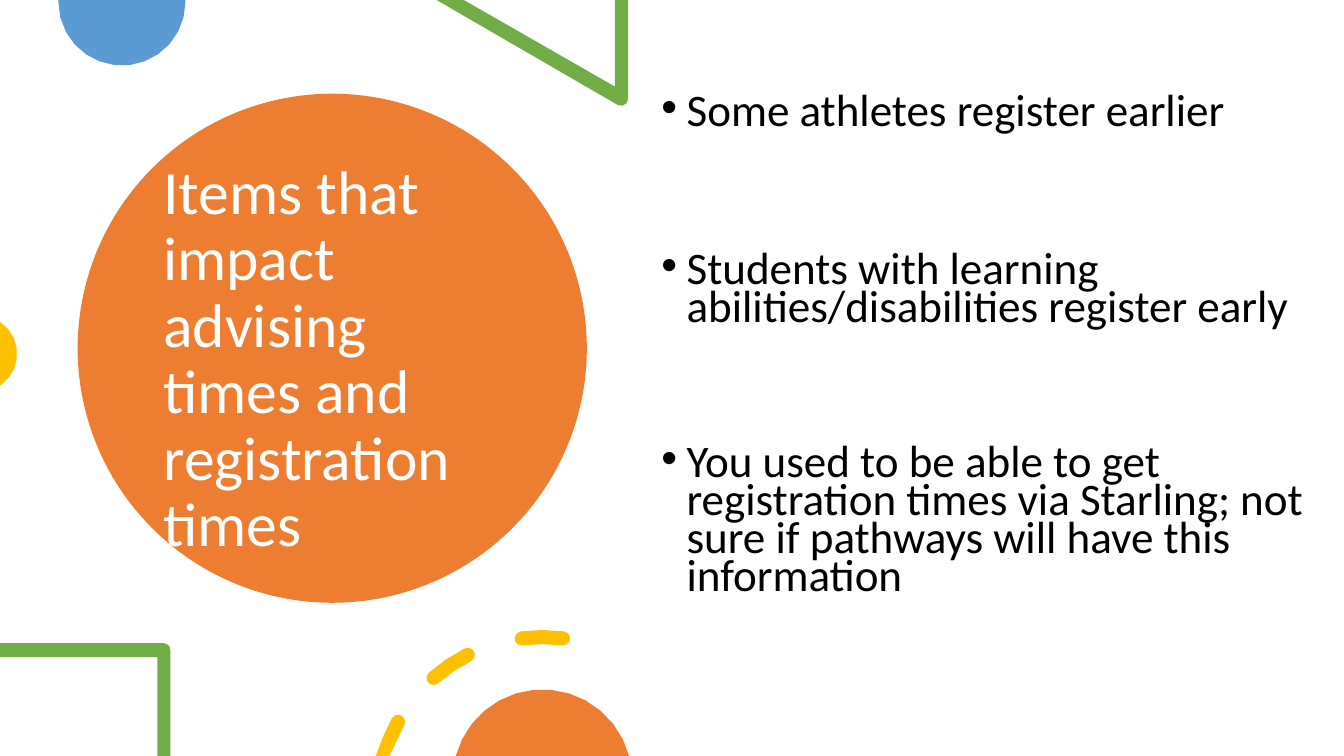
from math import ceil, cos, radians, sin, sqrt

from lxml import etree
from pptx import Presentation
from pptx.dml.color import RGBColor
from pptx.enum.shapes import MSO_SHAPE
from pptx.enum.text import MSO_ANCHOR, MSO_AUTO_SIZE, PP_ALIGN
from pptx.oxml.ns import qn
from pptx.util import Inches, Pt

OVAL = MSO_SHAPE.OVAL
MIDDLE = MSO_ANCHOR.MIDDLE
TOP = MSO_ANCHOR.TOP
LEFT = PP_ALIGN.LEFT
FIXED = MSO_AUTO_SIZE.NONE

ORANGE = RGBColor(0xED, 0x7D, 0x31)
BLUE = RGBColor(0x5B, 0x9B, 0xD5)
GREEN = RGBColor(0x70, 0xAD, 0x47)
YELLOW = RGBColor(0xFF, 0xC0, 0x00)
WHITE = RGBColor(0xFF, 0xFF, 0xFF)
BLACK = RGBColor(0, 0, 0)

FONT = "Calibri"
WIDE, HIGH = 13.33, 7.5
TITLE = "Items that impact advising times and registration times"
ITEMS = [
    ("Some athletes register earlier", 10),
    ("Students with learning abilities/disabilities register early", 86),
    ("You used to be able to get registration times via Starling; "
     "not sure if pathways will have this information", 84),
]


def arc(x, y, size, start, end):
    steps = ceil(abs(end - start) * sqrt(size) / 11)
    turns = [radians(start + (end - start) * i / steps) for i in range(steps + 1)]
    return [(x + size * cos(t), y + size * sin(t)) for t in turns]


def dash(x, y, size, half, start, end):
    def cap(angle, turn):
        t = radians(angle)
        return arc(x + size * cos(t), y + size * sin(t), half, turn, turn + 180)[1:-1]

    loop = (arc(x, y, size + half, start, end) + cap(end, end)
            + arc(x, y, size - half, end, start) + cap(start, start + 180))
    return [(px, min(py, HIGH)) for px, py in loop]


def paint(shape, color):
    shape.shadow.inherit = False
    shape.fill.solid()
    shape.fill.fore_color.rgb = color
    shape.line.fill.background()


def outline(slide, color, *loops):
    paths = [[(Inches(x), Inches(y)) for x, y in loop] for loop in loops]
    pen = slide.shapes.build_freeform(*paths[0][0])
    pen.add_line_segments(paths[0][1:])
    for path in paths[1:]:
        pen.move_to(*path[0])
        pen.add_line_segments(path[1:])
    paint(pen.convert_to_shape(), color)


def place(slide, holder, box, anchor):
    holder.left, holder.top, holder.width, holder.height = map(Inches, box)
    slide.shapes.element.append(holder.element)
    frame = holder.text_frame
    frame.word_wrap = True
    frame.auto_size = FIXED
    frame.vertical_anchor = anchor
    return frame


def write(para, text, size, color, spacing, before):
    para.alignment = LEFT
    para.line_spacing = spacing
    para.space_before = Pt(before)
    run = para.add_run()
    run.text = text
    run.font.name = FONT
    run.font.size = Pt(size)
    run.font.color.rgb = color


def bullet(para):
    props = para._p.get_or_add_pPr()
    props.set("marL", str(Inches(0.25)))
    props.set("indent", str(Inches(-0.25)))
    etree.SubElement(props, qn("a:buFont")).set("typeface", "Arial")
    etree.SubElement(props, qn("a:buChar")).set("char", "•")


def decor(slide):
    paint(slide.shapes.add_shape(
        OVAL, Inches(0.77), Inches(0.93), Inches(5.05), Inches(5.05)), ORANGE)
    outline(slide, BLUE, [(0.58, 0), (1.84, 0)] + arc(1.21, 0.02, 0.63, 0, 180))
    outline(slide, GREEN,
            [(6.23, 0), (6.1, 0), (6.1, 0.86), (4.6, 0), (4.33, 0)]
            + arc(6.16, 0.98, 0.07, 115, 0))
    outline(slide, YELLOW, arc(-0.21, 3.51, 0.38, -56, 56))
    outline(slide, GREEN,
            [(1.69, 7.5), (1.56, 7.5), (1.56, 6.52), (0, 6.52), (0, 6.38)]
            + arc(1.62, 6.45, 0.07, 270, 360))
    outline(slide, YELLOW,
            *[dash(5.38, 7.96, 1.64, 0.07, mid - 7.2, mid + 7.2)
              for mid in range(202, 271, 34)])
    outline(slide, ORANGE, arc(5.38, 7.73, 0.89, 195, 345))


def main():
    deck = Presentation()
    deck.slide_width, deck.slide_height = Inches(WIDE), Inches(HIGH)
    slide = deck.slides.add_slide(deck.slide_layouts[1])
    title, body = slide.placeholders
    decor(slide)

    frame = place(slide, title, (1.52, 1.35, 3.54, 4.45), MIDDLE)
    write(frame.paragraphs[0], TITLE, 44, WHITE, 0.9, 0)

    frame = place(slide, body, (6.46, 0.9, 6.67, 6.48), TOP)
    for i, (text, before) in enumerate(ITEMS):
        para = frame.add_paragraph() if i else frame.paragraphs[0]
        write(para, text, 32.2, BLACK, 0.7, before)
        bullet(para)

    deck.save("out.pptx")


if __name__ == "__main__":
    main()
